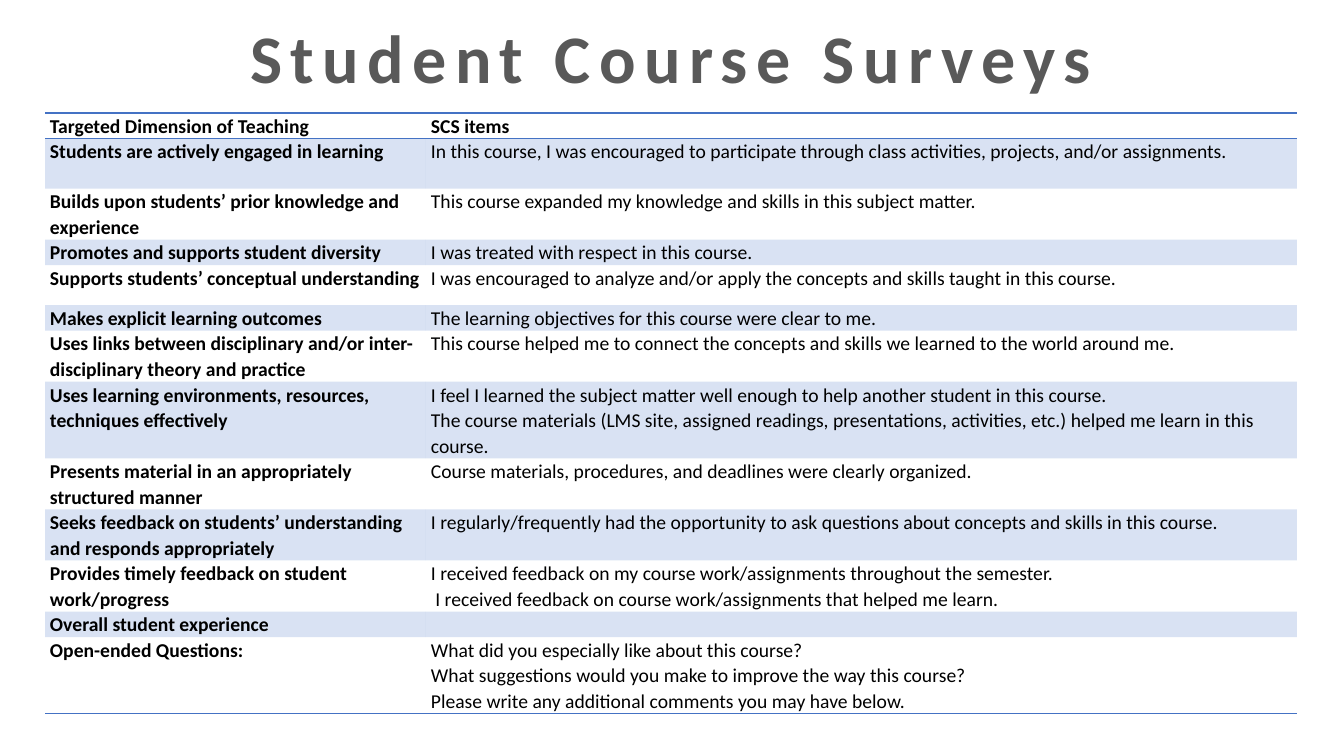
"""Build the Student Course Surveys slide with its table of teaching dimensions and survey items."""
from dataclasses import dataclass
from typing import Any

from lxml.etree import SubElement
from pptx import Presentation
from pptx.dml.color import RGBColor
from pptx.enum.text import MSO_ANCHOR, MSO_AUTO_SIZE, PP_ALIGN
from pptx.oxml.ns import qn
from pptx.slide import Slide
from pptx.table import Table, _Cell
from pptx.util import Emu, Pt

EMU_PER_PX = 12192000 / 1344
NO_GRID_STYLE = "{2D5ABB26-0587-4C30-8999-92F81FD0307C}"


@dataclass(frozen=True)
class Theme:
    font: str = "Calibri"
    heading: str = "595959"
    ink: str = "000000"
    accent: str = "4472C4"
    band_alpha: int = 20000
    heading_size: float = 48.6
    body_size: float = 14
    heading_tracking: int = 600
    rule_width: float = 1


@dataclass(frozen=True)
class Dimension:
    height: int
    name: str
    items: tuple[str, ...] = ()


THEME = Theme()
COLUMN_WIDTHS = (381, 871)
HEADER = Dimension(24, "Targeted Dimension of Teaching", ("SCS items",))
DIMENSIONS = (
    Dimension(50, "Students are actively engaged in learning", (
        "In this course, I was encouraged to participate through class activities, projects, and/or assignments.",)),
    Dimension(24, "Builds upon students’ prior knowledge and experience", (
        "This course expanded my knowledge and skills in this subject matter.",)),
    Dimension(24, "Promotes and supports student diversity", (
        "I was treated with respect in this course.",)),
    Dimension(40, "Supports students’ conceptual understanding", (
        "I was encouraged to analyze and/or apply the concepts and skills taught in this course.",)),
    Dimension(24, "Makes explicit learning outcomes", (
        "The learning objectives for this course were clear to me.",)),
    Dimension(50, "Uses links between disciplinary and/or inter-disciplinary theory and practice", (
        "This course helped me to connect the concepts and skills we learned to the world around me.",)),
    Dimension(76, "Uses learning environments, resources, techniques effectively", (
        "I feel I learned the subject matter well enough to help another student in this course.",
        "The course materials (LMS site, assigned readings, presentations, activities, etc.) "
        "helped me learn in this course.")),
    Dimension(50, "Presents material in an appropriately structured manner", (
        "Course materials, procedures, and deadlines were clearly organized.",)),
    Dimension(39, "Seeks feedback on students’ understanding and responds appropriately", (
        "I regularly/frequently had the opportunity to ask questions about concepts and skills in this course.",)),
    Dimension(50, "Provides timely feedback on student work/progress", (
        "I received feedback on my course work/assignments throughout the semester.",
        " I received feedback on course work/assignments that helped me learn.")),
    Dimension(24, "Overall student experience"),
    Dimension(76, "Open-ended Questions:", (
        "What did you especially like about this course?",
        "What suggestions would you make to improve the way this course?",
        "Please write any additional comments you may have below.")),
)


def px(length: float) -> Emu:
    """Turn px into EMU."""
    return Emu(round(length * EMU_PER_PX))


def apply(target: Any, values: dict[str, Any]) -> None:
    """Set each attribute named in the format values."""
    for attribute, value in values.items():
        setattr(target, attribute, value)


def style_font(font: Any, size: float, color: str, bold: bool) -> None:
    """Give a font its face, size, weight and colour."""
    apply(font, {"name": THEME.font, "size": Pt(size), "bold": bold})
    font.color.rgb = RGBColor.from_string(color)


def draw_heading(slide: Slide, wording: str) -> None:
    """Place and format the slide title."""
    heading = slide.shapes.title
    apply(heading, {"left": px(45), "top": px(19), "width": px(1252), "height": px(85)})
    frame = heading.text_frame
    apply(frame, {"word_wrap": True, "auto_size": MSO_AUTO_SIZE.NONE, "vertical_anchor": MSO_ANCHOR.MIDDLE})
    apply(frame, {f"margin_{side}": px(10) for side in ("left", "top", "right", "bottom")})
    paragraph = frame.paragraphs[0]
    apply(paragraph, {"alignment": PP_ALIGN.CENTER, "line_spacing": 0.9})
    run = paragraph.add_run()
    run.text = wording
    style_font(run.font, THEME.heading_size, THEME.heading, True)
    run.font._element.set("spc", str(THEME.heading_tracking))


def draw_rule(cell: _Cell, edge: str) -> None:
    """Draw an accent rule on one edge of a cell."""
    line = SubElement(cell._tc.get_or_add_tcPr(), qn(f"a:{edge}"), w=str(Pt(THEME.rule_width)))
    SubElement(SubElement(line, qn("a:solidFill")), qn("a:srgbClr"), val=THEME.accent)


def fill_cell(cell: _Cell, banded: bool) -> None:
    """Fill a cell with the translucent band or leave it clear."""
    if not banded:
        cell.fill.background()
        return
    cell.fill.solid()
    cell.fill.fore_color.rgb = RGBColor.from_string(THEME.accent)
    color = cell._tc.tcPr.find(f"{qn('a:solidFill')}/{qn('a:srgbClr')}")
    SubElement(color, qn("a:alpha"), val=str(THEME.band_alpha))


def write_cell(cell: _Cell, lines: tuple[str, ...], bold: bool) -> None:
    """Write one paragraph per line into a cell."""
    apply(cell, {"margin_left": px(5), "margin_right": px(5), "margin_top": 0, "margin_bottom": 0,
                 "vertical_anchor": MSO_ANCHOR.TOP})
    frame = cell.text_frame
    for index, wording in enumerate(lines):
        paragraph = frame.add_paragraph() if index else frame.paragraphs[0]
        paragraph.line_spacing = 1.07
        run = paragraph.add_run()
        run.text = wording
        style_font(run.font, THEME.body_size, THEME.ink, bold)
    if not lines:
        SubElement(frame.paragraphs[0]._p, qn("a:endParaRPr"), sz=str(round(THEME.body_size * 100)))


def draw_dimension(survey: Table, index: int, dimension: Dimension, edges: tuple[str, ...]) -> None:
    """Draw one table row."""
    survey.rows[index].height = px(dimension.height)
    for column, lines in enumerate(((dimension.name,), dimension.items)):
        cell = survey.cell(index, column)
        write_cell(cell, lines, column == 0 or index == 0)
        for edge in edges:
            draw_rule(cell, edge)
        fill_cell(cell, index % 2 == 1)


def draw_survey(slide: Slide) -> None:
    """Draw the table of dimensions and survey items."""
    rows = (HEADER, *DIMENSIONS)
    last = len(rows) - 1
    total = sum(row.height for row in rows)
    survey = slide.shapes.add_table(
        len(rows), len(COLUMN_WIDTHS), px(45), px(113), px(sum(COLUMN_WIDTHS)), px(total)).table
    apply(survey, {"first_row": False, "horz_banding": False})
    survey._tbl.tblPr.find(qn("a:tableStyleId")).text = NO_GRID_STYLE
    for column, width in zip(survey.columns, COLUMN_WIDTHS):
        column.width = px(width)
    rules = {0: ("lnT", "lnB"), last: ("lnB",)}
    for index, dimension in enumerate(rows):
        draw_dimension(survey, index, dimension, rules.get(index, ()))


def main() -> None:
    """Build and save the presentation."""
    presentation = Presentation()
    apply(presentation, {"slide_width": px(1344), "slide_height": px(756)})
    slide = presentation.slides.add_slide(presentation.slide_layouts[5])
    draw_heading(slide, "Student Course Surveys")
    draw_survey(slide)
    presentation.save("out.pptx")


if __name__ == "__main__":
    main()
